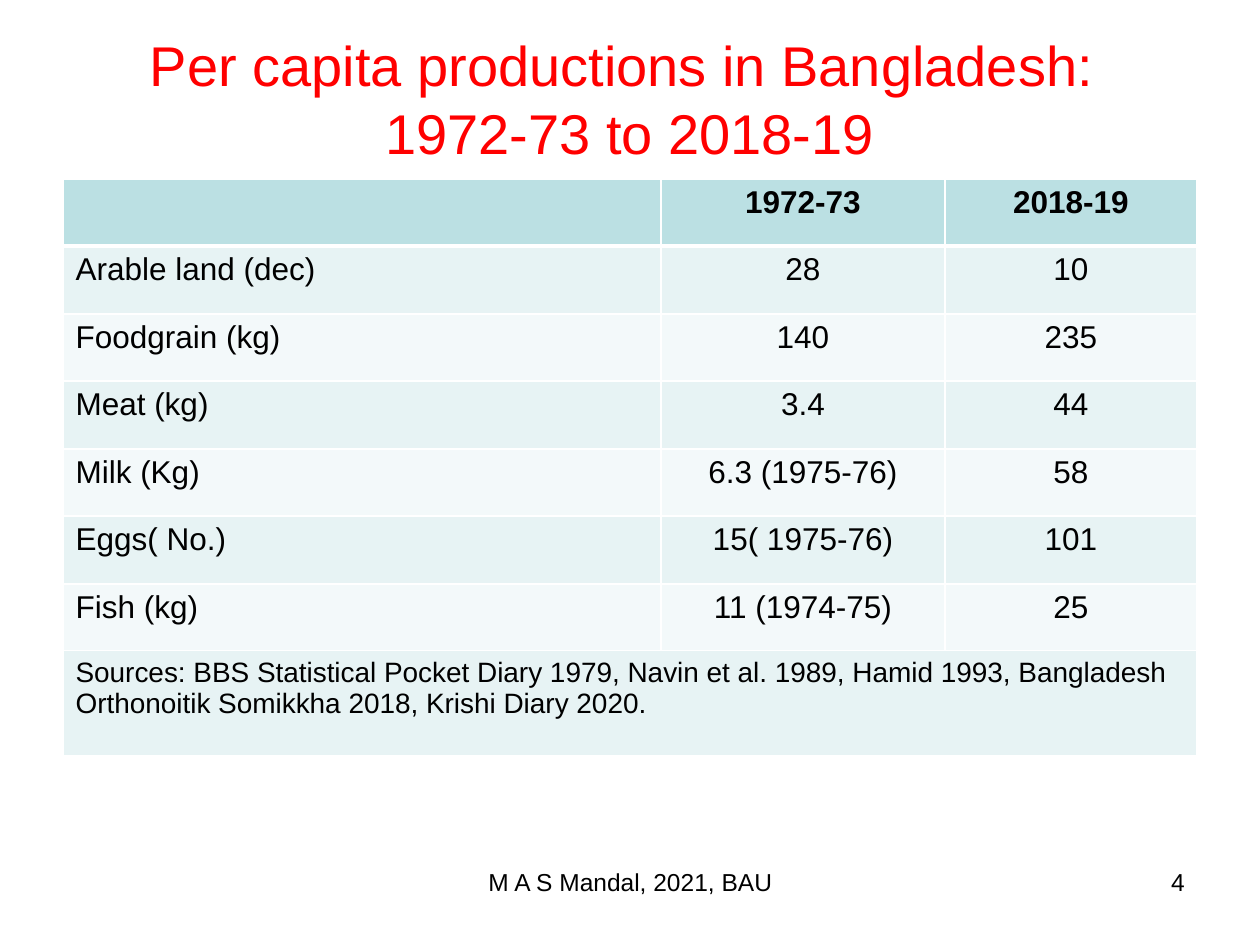
from dataclasses import dataclass

from lxml import etree
from pptx import Presentation
from pptx.dml.color import RGBColor
from pptx.enum.text import MSO_ANCHOR, PP_ALIGN
from pptx.oxml.ns import qn
from pptx.util import Emu, Pt

LEFT, CENTER, RIGHT = PP_ALIGN.LEFT, PP_ALIGN.CENTER, PP_ALIGN.RIGHT
TOP, MIDDLE = MSO_ANCHOR.TOP, MSO_ANCHOR.MIDDLE
EMU_PER_PX = 914400 // 126


@dataclass(frozen=True)
class Theme:
    font: str = "Arial"
    title_color: str = "FF0000"
    text_color: str = "000000"
    border_color: str = "FFFFFF"
    header_fill: str = "BBE0E3"
    band_fills: tuple = ("E7F3F4", "F3F9FA")
    title_size: int = 32
    table_size: int = 18
    source_size: int = 16
    footer_size: int = 14
    border_width: int = 1
    header_border_width: int = 3


HEADER = ("", "1972-73", "2018-19")
PRODUCTION = (
    ("Arable land (dec)", "28", "10"),
    ("Foodgrain (kg)", "140", "235"),
    ("Meat (kg)", "3.4", "44"),
    ("Milk (Kg)", "6.3 (1975-76)", "58"),
    ("Eggs( No.)", "15( 1975-76)", "101"),
    ("Fish (kg)", "11 (1974-75)", "25"),
)
SOURCES = (
    "Sources: BBS Statistical Pocket Diary 1979, Navin et al. 1989, Hamid 1993, "
    "Bangladesh Orthonoitik Somikkha 2018, Krishi Diary 2020."
)


def px(length):
    return Emu(length * EMU_PER_PX)


class SlideBuilder:
    def __init__(self, presentation, theme):
        self.theme = theme
        self.slide = presentation.slides.add_slide(presentation.slide_layouts[6])

    def set_text(self, text_frame, text, size, align=LEFT, color=None, bold=False):
        text_frame.text = text
        paragraph = text_frame.paragraphs[0]
        paragraph.alignment = align
        font_format = {"name": self.theme.font, "size": Pt(size), "bold": bold}
        for run in paragraph.runs:
            for attribute, value in font_format.items():
                setattr(run.font, attribute, value)
            run.font.color.rgb = RGBColor.from_string(color or self.theme.text_color)

    def text_box(self, box, text, size, align, color=None, anchor=TOP):
        shape = self.slide.shapes.add_textbox(*map(px, box))
        shape.text_frame.word_wrap = True
        shape.text_frame.vertical_anchor = anchor
        self.set_text(shape.text_frame, text, size, align, color)

    def borders(self, cell, top, bottom):
        properties = cell._tc.get_or_add_tcPr()
        side = self.theme.border_width
        widths = {"a:lnL": side, "a:lnR": side, "a:lnT": top, "a:lnB": bottom}
        for tag, width in widths.items():
            line = etree.SubElement(properties, qn(tag), w=str(Pt(width)))
            fill = etree.SubElement(line, qn("a:solidFill"))
            etree.SubElement(fill, qn("a:srgbClr"), val=self.theme.border_color)

    def table(self, box, rows, column_widths, row_heights):
        theme = self.theme
        frame = self.slide.shapes.add_table(len(rows), len(column_widths), *map(px, box))
        table = frame.table
        for column, width in zip(table.columns, column_widths):
            column.width = px(width)
        for row, height in zip(table.rows, row_heights):
            row.height = px(height)
        for row_index, texts in enumerate(rows):
            is_header = row_index == 0
            fill = theme.header_fill if is_header else theme.band_fills[(row_index - 1) % 2]
            top = theme.header_border_width if row_index == 1 else theme.border_width
            bottom = theme.header_border_width if is_header else theme.border_width
            size = theme.source_size if len(texts) == 1 else theme.table_size
            for column_index, cell in enumerate(table.rows[row_index].cells):
                self.borders(cell, top, bottom)
                cell.fill.solid()
                cell.fill.fore_color.rgb = RGBColor.from_string(fill)
                if column_index < len(texts):
                    align = CENTER if column_index else LEFT
                    self.set_text(cell.text_frame, texts[column_index], size, align, bold=is_header)
            if len(texts) == 1:
                table.cell(row_index, 0).merge(table.cell(row_index, len(column_widths) - 1))


def main():
    presentation = Presentation()
    presentation.slide_width, presentation.slide_height = px(1260), px(945)
    theme = Theme()
    builder = SlideBuilder(presentation, theme)
    builder.text_box(
        (63, 38, 1134, 120),
        "Per capita productions in Bangladesh: \v1972-73 to 2018-19",
        theme.title_size, CENTER, theme.title_color, MIDDLE,
    )
    rows = (HEADER, *PRODUCTION, (SOURCES,))
    data_rows = len(rows) - 1
    edges = [round(index * 472 / data_rows) for index in range(data_rows + 1)] + [577]
    row_heights = [end - start for start, end in zip(edges, edges[1:])]
    builder.table((63, 179, 1134, 577), rows, (598, 284, 252), row_heights)
    builder.text_box((903, 861, 294, 66), "4", theme.footer_size, RIGHT)
    builder.text_box((431, 861, 399, 66), "M A S Mandal, 2021, BAU", theme.footer_size, CENTER)
    presentation.save("out.pptx")


if __name__ == "__main__":
    main()
